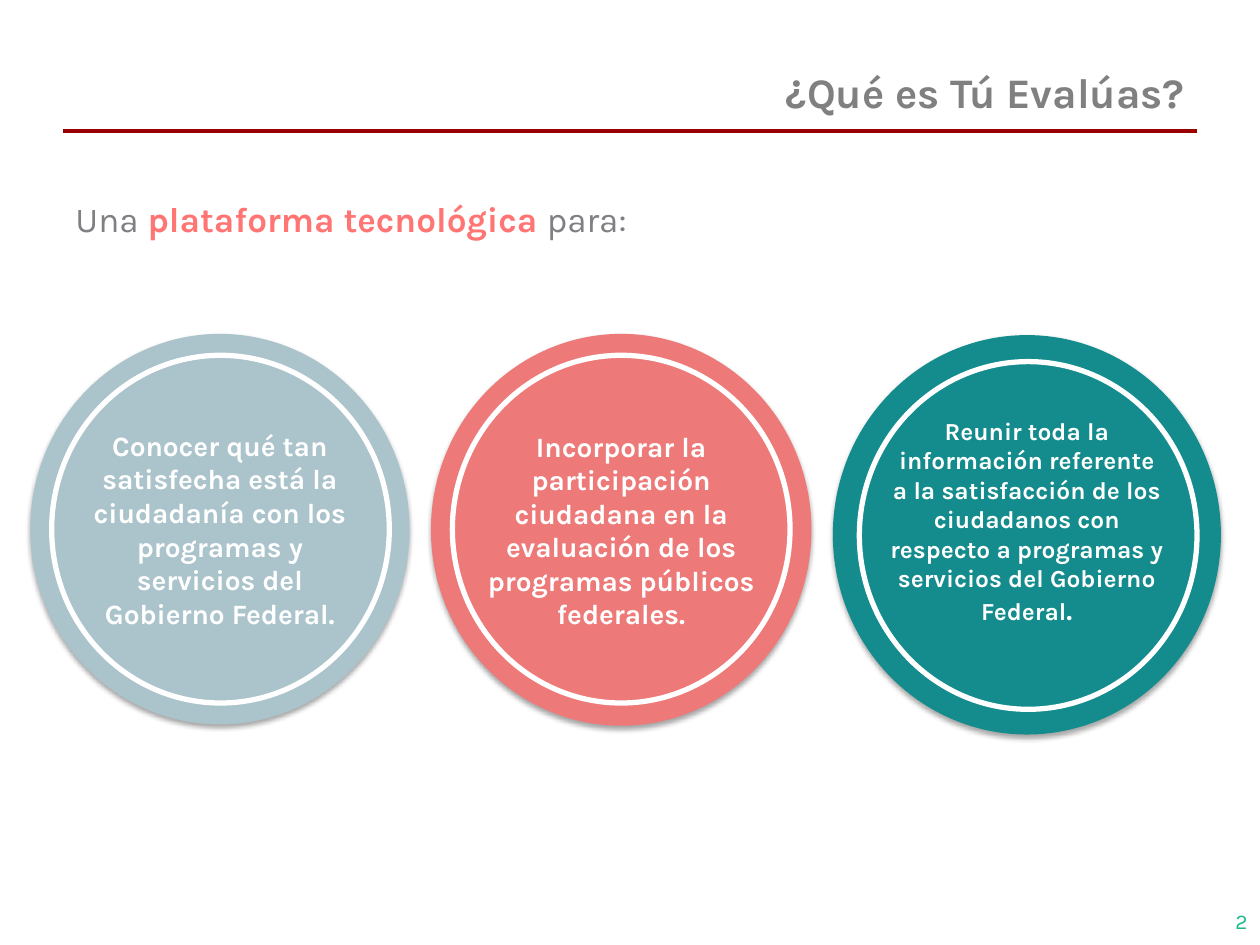
import dataclasses

import lxml.etree
import pptx
import pptx.dml.color
import pptx.enum.shapes
import pptx.enum.text
import pptx.oxml.ns
import pptx.util

Inches = pptx.util.Inches
ALIGN = pptx.enum.text.PP_ALIGN
ANCHOR = pptx.enum.text.MSO_ANCHOR


@dataclasses.dataclass(frozen=True)
class Theme:
    font: str = "Karla"
    title_grey: str = "808080"
    text_grey: str = "807F83"
    rule_red: str = "990000"
    accent: str = "FF7574"
    page_green: str = "1CB78D"
    white: str = "FFFFFF"
    blue_grey: str = "ABC3CB"
    coral: str = "ED7A79"
    teal: str = "148B8C"
    title_size: int = 24
    intro_size: int = 20
    circle_size: int = 16
    small_circle_size: int = 14
    page_size: int = 12


def color(value):
    return pptx.dml.color.RGBColor.from_string(value)


def add_effects(shape, shadow=False):
    """Replace inherited effects with none, or with a soft shadow below."""
    properties = shape._element.spPr
    for old in properties.findall(pptx.oxml.ns.qn("a:effectLst")):
        properties.remove(old)
    effects = lxml.etree.SubElement(properties, pptx.oxml.ns.qn("a:effectLst"))
    if shadow:
        outer = lxml.etree.SubElement(
            effects, pptx.oxml.ns.qn("a:outerShdw"),
            blurRad=str(pptx.util.Pt(3.1)), dist=str(pptx.util.Pt(1.8)),
            dir="5400000", rotWithShape="0")
        black = lxml.etree.SubElement(
            outer, pptx.oxml.ns.qn("a:srgbClr"), val="000000")
        lxml.etree.SubElement(black, pptx.oxml.ns.qn("a:alpha"), val="35000")


class SlideBuilder:
    def __init__(self, slide, theme):
        self.slide = slide
        self.theme = theme

    def fill_text(self, shape, runs, align, anchor):
        """Fill one paragraph with (text, size, color, bold) runs."""
        frame = shape.text_frame
        frame.word_wrap = True
        frame.vertical_anchor = anchor
        paragraph = frame.paragraphs[0]
        paragraph.alignment = align
        for text, size, value, bold in runs:
            run = paragraph.add_run()
            run.text = text
            run.font.name = self.theme.font
            run.font.size = pptx.util.Pt(size)
            run.font.color.rgb = color(value)
            run.font.bold = bold

    def text(self, box, runs, align=ALIGN.LEFT, anchor=ANCHOR.MIDDLE):
        shape = self.slide.shapes.add_textbox(*map(Inches, box))
        self.fill_text(shape, runs, align, anchor)

    def rule(self, left, right, top):
        line = self.slide.shapes.add_connector(
            pptx.enum.shapes.MSO_CONNECTOR.STRAIGHT,
            Inches(left), Inches(top), Inches(right), Inches(top))
        line.line.color.rgb = color(self.theme.rule_red)
        line.line.width = pptx.util.Pt(2)
        add_effects(line)

    def ellipse(self, group, box):
        return group.shapes.add_shape(
            pptx.enum.shapes.MSO_SHAPE.OVAL, *map(Inches, box))

    def badge(self, disc_box, ring_corner, fill, runs, bottom_inset=0):
        """Draw a shadowed disc with text and a white ring inside it."""
        group = self.slide.shapes.add_group_shape()
        disc = self.ellipse(group, disc_box)
        disc.fill.solid()
        disc.fill.fore_color.rgb = color(fill)
        disc.line.fill.background()
        add_effects(disc, shadow=True)
        frame = disc.text_frame
        frame.margin_left = frame.margin_right = frame.margin_top = 0
        frame.margin_bottom = Inches(bottom_inset)
        self.fill_text(disc, runs, ALIGN.CENTER, ANCHOR.MIDDLE)

        ring = self.ellipse(group, (*ring_corner, 2.68, 2.76))
        ring.fill.background()
        ring.line.color.rgb = color(self.theme.white)
        ring.line.width = pptx.util.Pt(3)
        ring.shadow.inherit = False


def main():
    presentation = pptx.Presentation()
    presentation.slide_width = Inches(10)
    presentation.slide_height = Inches(7.5)
    slide = presentation.slides.add_slide(presentation.slide_layouts[6])
    theme = Theme()
    builder = SlideBuilder(slide, theme)

    builder.text((0.5, 0.42, 9, 0.61),
                 [("¿Qué es Tú Evalúas?", theme.title_size,
                   theme.title_grey, True)], ALIGN.RIGHT)
    builder.rule(0.5, 9.5, 1.04)
    builder.text((7.67, 7.11, 2.33, 0.4),
                 [("2", theme.page_size, theme.page_green, False)], ALIGN.RIGHT)

    large = (theme.circle_size, theme.white, True)
    small = (theme.small_circle_size, theme.white, True)
    builder.badge(
        (0.24, 2.65, 3.01, 3.1), (0.41, 2.82), theme.blue_grey,
        [("Conocer qué tan satisfecha está la ciudadanía con los programas y "
          "servicios del Gobierno Federal.", *large)])
    builder.badge(
        (3.42, 2.65, 3.02, 3.11), (3.59, 2.82), theme.coral,
        [("Incorporar la participación ciudadana en la evaluación de los "
          "programas públicos federales.", *large)])
    builder.badge(
        (6.61, 2.66, 3.08, 3.17), (6.82, 2.87), theme.teal,
        [("Reunir toda la información referente a la satisfacción de los "
          "ciudadanos con respecto a programas y servicios del Gobierno "
          "Federal", *small), (".", *large)], bottom_inset=0.22)

    builder.text((0.5, 1.52, 6.45, 0.49),
                 [("Una", theme.intro_size, theme.text_grey, False),
                  (" plataforma tecnológica ", theme.intro_size,
                   theme.accent, True),
                  ("para:", theme.intro_size, theme.text_grey, False)],
                 anchor=ANCHOR.TOP)

    presentation.save("out.pptx")


if __name__ == "__main__":
    main()
